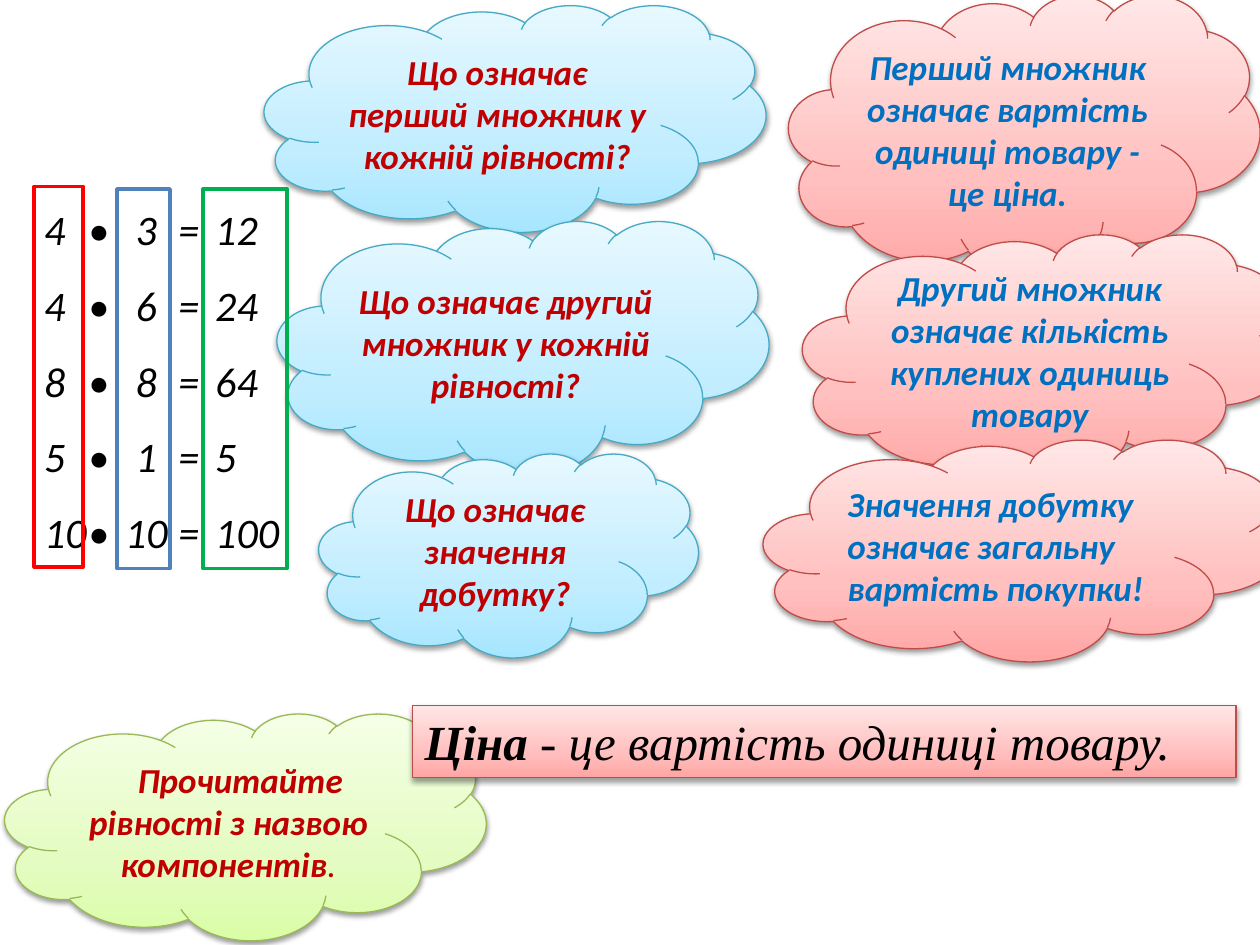
from lxml.etree import SubElement
from pptx import Presentation
from pptx.dml.color import RGBColor
from pptx.enum.shapes import MSO_SHAPE
from pptx.enum.text import MSO_ANCHOR, MSO_AUTO_SIZE, PP_ALIGN
from pptx.oxml.ns import qn
from pptx.util import Cm, Pt

HUES = {
    "black": "000000", "wine": "C00000", "ink": "0070C0",
    "red": "FF0000", "navy": "4F81BD", "leaf": "00B050",
}
# Soft looks: outline, then gradient from bottom to top
LOOKS = {
    "lime": ("98B955", "DAFDA7", "E4FCC2", "F5FFE7"),
    "sky": ("46AAC5", "A7E6FF", "C1EDFF", "E7F8FF"),
    "rose": ("BF4C48", "FFA6A5", "FFC0BF", "FFE7E7"),
}
STOPS = (0, 35, 100)

# Look, text colour, alignment, first-line indent, box in cm, text
CLOUDS = [
    ("lime", "wine", PP_ALIGN.CENTER, 0.48, (0.1, 14.38, 9.7, 4.57),
     [("Прочитайте рівності з назвою компонентів", True), (".", False)]),
    ("sky", "wine", PP_ALIGN.CENTER, 0, (5.33, 0.1, 10.11, 4.57),
     "Що означає перший множник у кожній рівності?"),
    ("rose", "ink", PP_ALIGN.CENTER, 0, (15.9, -0.1, 9.5, 5.69),
     "Перший множник означає вартість одиниці товару - це ціна."),
    ("sky", "wine", PP_ALIGN.CENTER, 0, (5.59, 4.45, 9.91, 5.13),
     "Що означає другий множник у кожній рівності?"),
    ("rose", "ink", PP_ALIGN.CENTER, 0, (16.18, 4.72, 9.86, 4.93),
     "Другий множник означає кількість куплених одиниць товару"),
    ("sky", "wine", PP_ALIGN.CENTER, 0, (6.43, 9.14, 7.65, 4.11),
     "Що означає значення добутку?"),
    ("rose", "ink", PP_ALIGN.LEFT, 0, (15.39, 8.86, 10.49, 4.47),
     "Значення добутку означає загальну вартість покупки!"),
]
SUMS = [(4, 3, 12), (4, 6, 24), (8, 8, 64), (5, 1, 5), (10, 10, 100)]
TABS = [(1.1, "ctr"), (2.06, "ctr"), (2.92, "ctr"), (3.45, "l")]
FRAMES = [
    ("red", (0.69, 3.76, 0.99, 7.67)),
    ("navy", (2.36, 3.81, 1.07, 7.65)),
    ("leaf", (4.09, 3.81, 1.7, 7.65)),
]


def tint(code):
    return RGBColor.from_string(code)


def place(box):
    return [Cm(side) for side in box]


def write(para, text, size=20, font="Calibri", hue="black", bold=True,
          align=PP_ALIGN.LEFT, space=None, indent=0):
    """Fill a paragraph; text is a string or a list of (string, bold)."""
    para.alignment = align
    if space:
        para.line_spacing = space
    if indent:
        para._p.get_or_add_pPr().set("indent", str(Cm(indent)))
    for part, heavy in [(text, bold)] if isinstance(text, str) else text:
        run = para.add_run()
        run.text = part
        run.font.size, run.font.name = Pt(size), font
        run.font.bold, run.font.italic = heavy, True
        run.font.color.rgb = tint(HUES[hue])


def add_soft(slide, kind, box, look):
    """Shape with a three-stop gradient and a soft drop shadow."""
    shape = slide.shapes.add_shape(kind, *place(box))
    edge, *shades = LOOKS[look]
    shape.fill.gradient()
    shape.fill.gradient_angle = 90
    stops = shape._element.spPr.find(".//" + qn("a:gsLst"))
    for old in list(stops):
        stops.remove(old)
    for spot, shade in zip(STOPS, shades):
        stop = SubElement(stops, qn("a:gs"), pos=str(spot * 1000))
        SubElement(stop, qn("a:srgbClr"), val=shade)
    shape.line.color.rgb = tint(edge)
    shape.line.width = Pt(0.75)
    shape.shadow.inherit = False
    glow = SubElement(shape._element.spPr.find(qn("a:effectLst")),
                      qn("a:outerShdw"), blurRad=str(Pt(3.1)),
                      dist=str(Pt(1.6)), dir="5400000", rotWithShape="0")
    dark = SubElement(glow, qn("a:srgbClr"), val=HUES["black"])
    SubElement(dark, qn("a:alpha"), val="38000")
    shape.text_frame.word_wrap = True
    return shape


def add_cloud(slide, look, hue, align, indent, box, text):
    cloud = add_soft(slide, MSO_SHAPE.CLOUD, box, look)
    cloud.text_frame.vertical_anchor = MSO_ANCHOR.MIDDLE
    write(cloud.text_frame.paragraphs[0], text, hue=hue, align=align,
          indent=indent)


def add_frame(slide, hue, box):
    frame = slide.shapes.add_shape(MSO_SHAPE.RECTANGLE, *place(box))
    frame.shadow.inherit = False
    frame.fill.background()
    frame.line.color.rgb = tint(HUES[hue])
    frame.line.width = Pt(2)


def add_sums(slide):
    body = slide.shapes.add_textbox(
        *place((0.64, 3.48, 7.65, 7.95))).text_frame
    body.word_wrap = True
    body.auto_size = MSO_AUTO_SIZE.SHAPE_TO_FIT_TEXT
    for row, (left, right, total) in enumerate(SUMS):
        para = body.add_paragraph() if row else body.paragraphs[0]
        para.line_spacing = 1.5
        tabs = SubElement(para._p.get_or_add_pPr(), qn("a:tabLst"))
        for spot, side in TABS:
            SubElement(tabs, qn("a:tab"), pos=str(Cm(spot)), algn=side)
        write(para, f"{left}\t•\t{right}\t=\t{total}", size=24, bold=False)


def add_bar(slide):
    bar = add_soft(slide, MSO_SHAPE.RECTANGLE,
                   (8.31, 14.22, 16.61, 1.45), "rose")
    bar.text_frame.vertical_anchor = MSO_ANCHOR.TOP
    bar.text_frame.auto_size = MSO_AUTO_SIZE.SHAPE_TO_FIT_TEXT
    write(bar.text_frame.paragraphs[0],
          [("Ціна ", True), ("- це вартість одиниці товару.", False)],
          size=28, font="Times New Roman")


def main():
    deck = Presentation()
    deck.slide_width, deck.slide_height = Cm(25.4), Cm(19.05)
    slide = deck.slides.add_slide(deck.slide_layouts[6])
    # Equations
    add_sums(slide)
    # Questions and answers
    for cloud in CLOUDS:
        add_cloud(slide, *cloud)
    # Column frames around factors and products
    for frame in FRAMES:
        add_frame(slide, *frame)
    # Definition
    add_bar(slide)
    deck.save("out.pptx")


if __name__ == "__main__":
    main()
